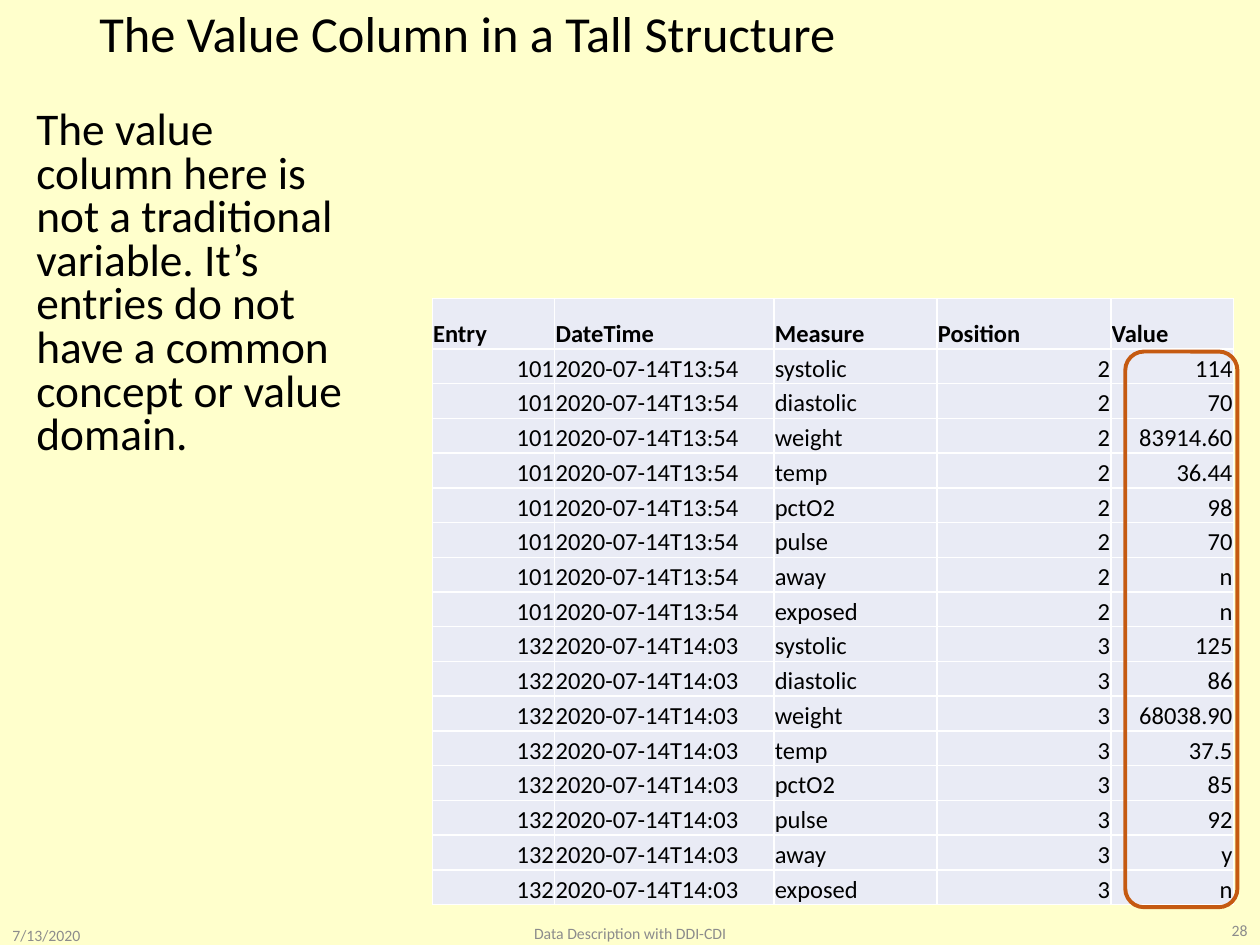
from dataclasses import dataclass
from itertools import product

from lxml import etree
from pptx import Presentation
from pptx import util as u
from pptx.dml.color import RGBColor
from pptx.enum import shapes, text
from pptx.oxml.ns import qn


@dataclass(frozen=True)
class Theme:
    """Colours, typeface and type sizes of the slide."""
    font: str = "Calibri"
    background: str = "FFFFCC"
    ink: str = "000000"
    muted: str = "8C8C8C"
    cell: str = "E9EBF5"
    border: str = "FFFFFF"
    accent: str = "C55A11"
    title_size: float = 28.8
    body_size: float = 25.9
    table_size: float = 14
    footer_size: float = 9


THEME = Theme()
LEFT, CENTER, RIGHT = text.PP_ALIGN.LEFT, text.PP_ALIGN.CENTER, text.PP_ALIGN.RIGHT
TOP, MIDDLE, BOTTOM = (text.MSO_ANCHOR.TOP, text.MSO_ANCHOR.MIDDLE,
                       text.MSO_ANCHOR.BOTTOM)
HEADINGS = ["Entry", "DateTime", "Measure", "Position", "Value"]
ALIGNMENTS = [RIGHT, LEFT, LEFT, RIGHT, RIGHT]
COLUMN_WIDTHS = [70, 125.3, 93.2, 99.3, 70]
HEADING_HEIGHT, ENTRY_HEIGHT = 28.8, 19.86
MEASURES = ["systolic", "diastolic", "weight", "temp",
            "pctO2", "pulse", "away", "exposed"]
VISITS = [
    ("101", "2020-07-14T13:54", "2",
     ["114", "70", "83914.60", "36.44", "98", "70", "n", "n"]),
    ("132", "2020-07-14T14:03", "3",
     ["125", "86", "68038.90", "37.5", "85", "92", "y", "n"]),
]


def apply(target, values):
    """Set each attribute of the target from a dict."""
    for name, value in values.items():
        setattr(target, name, value)


def write(frame, words, size, color, bold=False, **paragraph_format):
    """Put one formatted paragraph into a text frame."""
    paragraph = frame.paragraphs[0]
    apply(paragraph, paragraph_format)
    run = paragraph.add_run()
    run.text = words
    apply(run.font, {"name": THEME.font, "size": u.Pt(size), "bold": bold})
    run.font.color.rgb = RGBColor.from_string(color)


def add_text(slide, box, words, size, color, anchor=MIDDLE, **paragraph_format):
    """Add a wrapped text box."""
    frame = slide.shapes.add_textbox(*map(u.Pt, box)).text_frame
    apply(frame, {"word_wrap": True, "vertical_anchor": anchor})
    write(frame, words, size, color, **paragraph_format)


def add_borders(cell):
    """Draw a thin line on all four sides of a cell."""
    properties = cell._tc.get_or_add_tcPr()
    for position, side in enumerate(("lnL", "lnR", "lnT", "lnB")):
        edge = etree.Element(qn(f"a:{side}"), w=str(u.Pt(1)))
        fill = etree.SubElement(edge, qn("a:solidFill"))
        etree.SubElement(fill, qn("a:srgbClr"), val=THEME.border)
        properties.insert(position, edge)


def fill_cell(cell, words, bold, alignment):
    """Format one table cell and write its value."""
    apply(cell, {"margin_left": u.Pt(0.5), "margin_right": u.Pt(0.5),
                 "margin_top": u.Pt(0.5), "margin_bottom": 0,
                 "vertical_anchor": BOTTOM})
    cell.fill.solid()
    cell.fill.fore_color.rgb = RGBColor.from_string(THEME.cell)
    add_borders(cell)
    write(cell.text_frame, words, THEME.table_size, THEME.ink, bold,
          alignment=alignment)


def add_measurements(slide, left, top):
    """Add the tall table with one row per visit and measure."""
    entries = [[entry, moment, measure, position, value]
               for entry, moment, position, values in VISITS
               for measure, value in zip(MEASURES, values)]
    rows = [HEADINGS] + entries
    heights = [HEADING_HEIGHT] + [ENTRY_HEIGHT] * len(entries)
    box = map(u.Pt, (left, top, sum(COLUMN_WIDTHS), sum(heights)))
    table = slide.shapes.add_table(len(rows), len(HEADINGS), *box).table
    apply(table, {"first_row": False, "horz_banding": False})
    for column, width in zip(table.columns, COLUMN_WIDTHS):
        column.width = u.Pt(width)
    for row, height in zip(table.rows, heights):
        row.height = u.Pt(height)
    for r, c in product(range(len(rows)), range(len(HEADINGS))):
        heading = r == 0
        fill_cell(table.cell(r, c), rows[r][c], heading,
                  LEFT if heading else ALIGNMENTS[c])


def add_highlight(slide, box):
    """Outline an area with a rounded frame."""
    highlight = slide.shapes.add_shape(
        shapes.MSO_SHAPE.ROUNDED_RECTANGLE, *map(u.Pt, box))
    highlight.shadow.inherit = False
    highlight.fill.background()
    highlight.line.color.rgb = RGBColor.from_string(THEME.accent)
    highlight.line.width = u.Pt(2.25)


def main():
    """Build and save the slide."""
    deck = Presentation()
    apply(deck, {"slide_width": u.Pt(720), "slide_height": u.Pt(540)})
    slide = deck.slides.add_slide(deck.slide_layouts[6])
    slide.background.fill.solid()
    slide.background.fill.fore_color.rgb = RGBColor.from_string(THEME.background)
    add_text(slide, (49.7, 2.9, 620.6, 35.3), "The Value Column in a Tall Structure",
             THEME.title_size, THEME.ink, line_spacing=0.9)
    add_text(slide, (13.7, 59.8, 195.8, 231.8),
             "The value column here is not a traditional variable. "
             "It’s entries do not have a common concept or value domain.",
             THEME.body_size, THEME.ink, TOP,
             line_spacing=0.8, space_before=u.Pt(10))
    footers = [
        ((0, 529.2, 84.2, 10.8), "7/13/2020", LEFT),
        ((238.3, 527.8, 243.4, 10.8), "Data Description with DDI-CDI", CENTER),
        ((655.9, 526.3, 64.1, 10.8), "28", RIGHT),
    ]
    for box, words, alignment in footers:
        add_text(slide, box, words, THEME.footer_size, THEME.muted,
                 alignment=alignment)
    add_measurements(slide, 247, 170.6)
    add_highlight(slide, (643, 200.9, 64.1, 317.5))
    deck.save("out.pptx")


if __name__ == "__main__":
    main()
